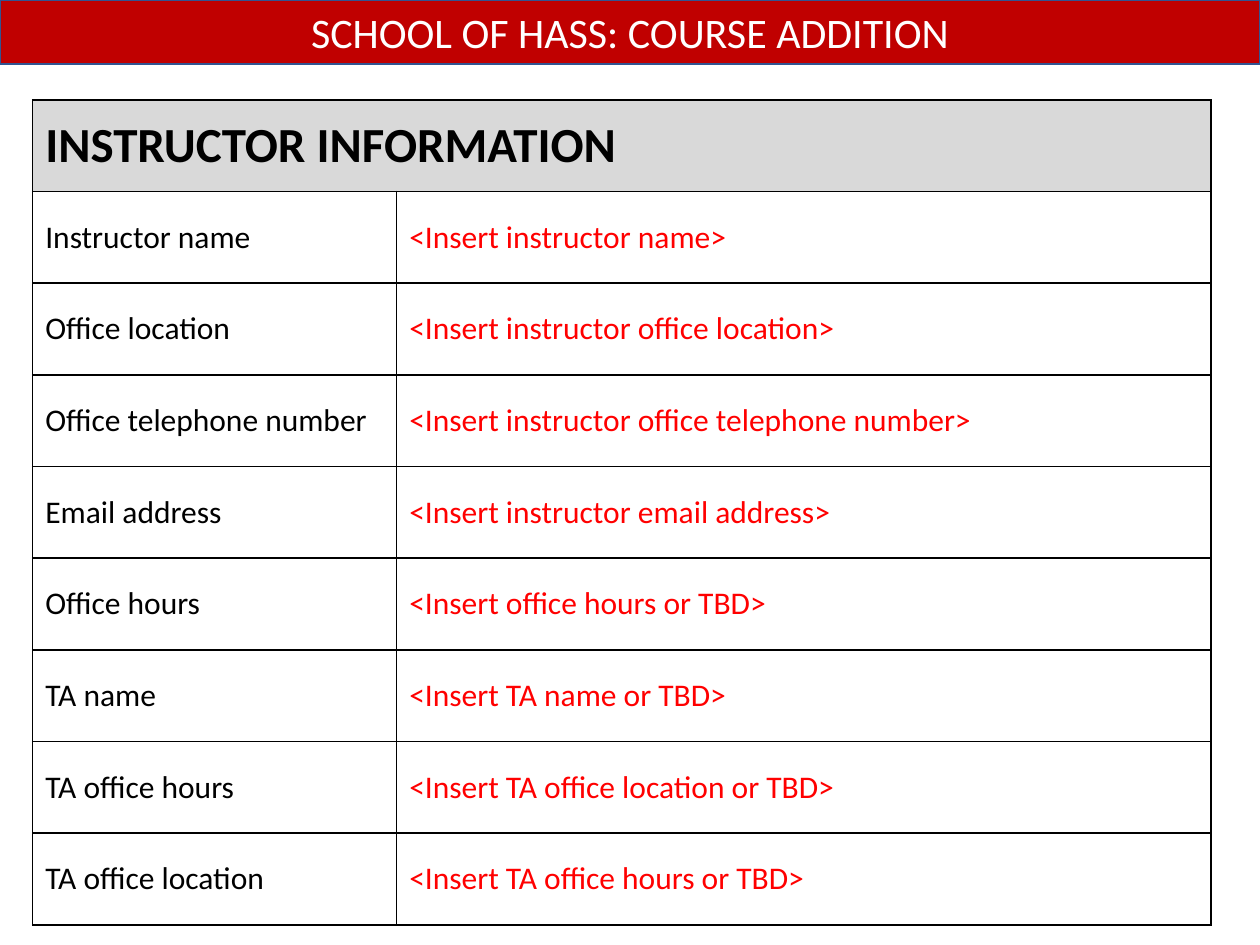
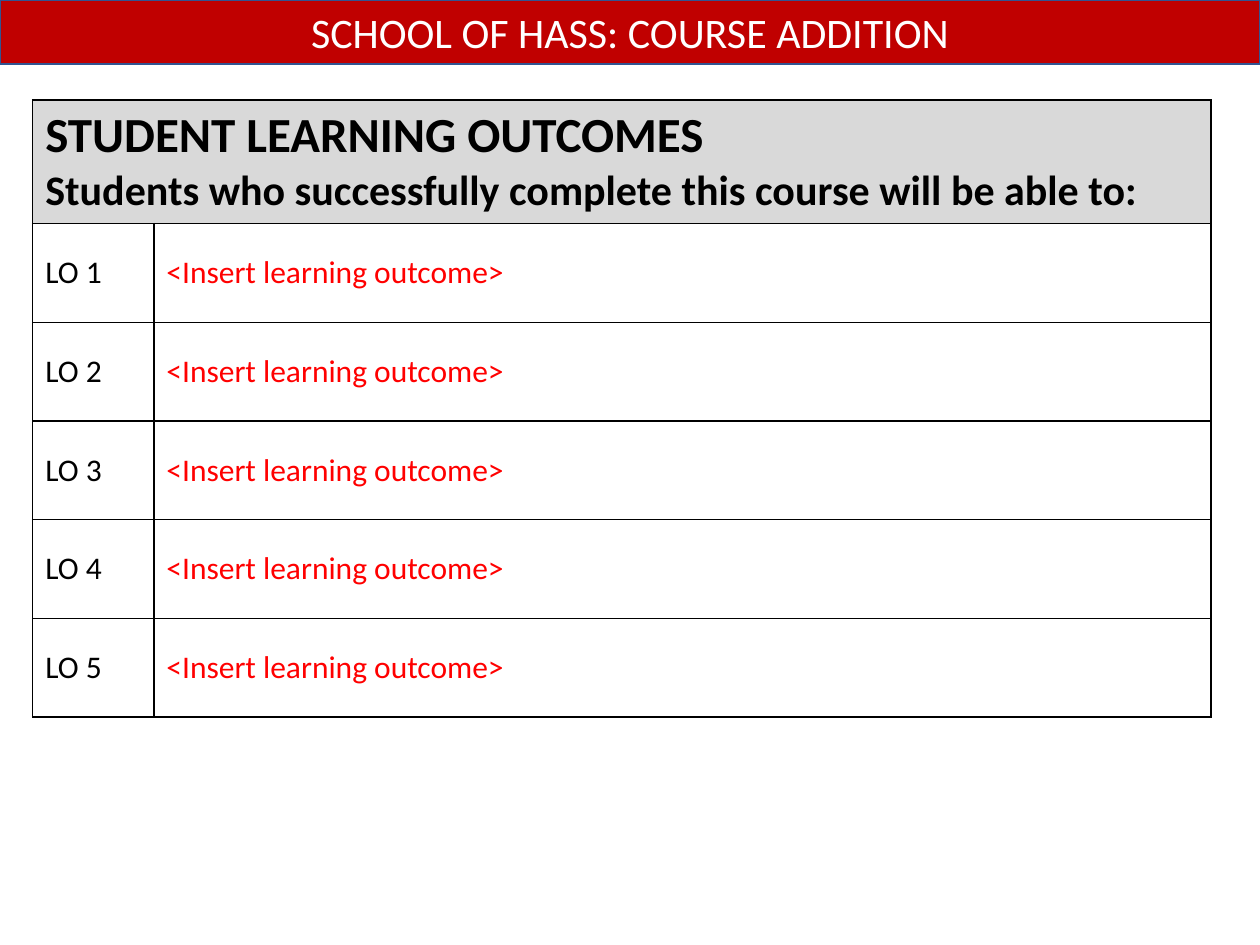
"""Build the instructor and outcome form slides for a course addition."""
from dataclasses import dataclass

import lxml.etree
import pptx
import pptx.dml.color
import pptx.enum.text
import pptx.oxml.ns
import pptx.presentation
import pptx.slide
import pptx.table
import pptx.text.text
import pptx.util

Pt = pptx.util.Pt
COLORS = {
    "band": "C00000",
    "edge": "325491",
    "head": "D9D9D9",
    "text": "000000",
    "hint": "FF0000",
    "white": "FFFFFF",
}
FONT = "Calibri"
BANNER = "SCHOOL OF HASS: COURSE ADDITION"
WIDTH, HEIGHT = 720, 540
LEFT, TOP, SPAN = 18.7, 57, 673.2


@dataclass
class Line:
    text: str
    size: float = 18
    color: str = "text"
    bold: bool = False


@dataclass
class Form:
    head: list[Line]
    rows: list[tuple[str, str]]
    label: float
    first: float
    step: float


FORMS = [
    Form(
        [Line("INSTRUCTOR INFORMATION", 28, bold=True)],
        [
            ("Instructor name", "<Insert instructor name>"),
            ("Office location", "<Insert instructor office location>"),
            ("Office telephone number", "<Insert instructor office telephone number>"),
            ("Email address", "<Insert instructor email address>"),
            ("Office hours", "<Insert office hours or TBD>"),
            ("TA name", "<Insert TA name or TBD>"),
            ("TA office hours", "<Insert TA office location or TBD>"),
            ("TA office location", "<Insert TA office hours or TBD>"),
        ],
        label=208, first=52.4, step=52.4,
    ),
    Form(
        [
            Line("STUDENT LEARNING OUTCOMES", 28, bold=True),
            Line("Students who successfully complete this course will be able to:", 24, bold=True),
        ],
        [(f"LO {n}", "<Insert learning outcome>") for n in range(1, 6)],
        label=69.2, first=70.8, step=56.4,
    ),
]


def paint(name: str) -> pptx.dml.color.RGBColor:
    return pptx.dml.color.RGBColor.from_string(COLORS[name])


def write(frame: pptx.text.text.TextFrame, lines: list[Line]) -> None:
    frame.text = "\n".join(line.text for line in lines)
    for para, line in zip(frame.paragraphs, lines):
        font = para.font
        font.name, font.size, font.bold = FONT, Pt(line.size), line.bold
        font.color.rgb = paint(line.color)


def border(cell: pptx.table._Cell) -> None:
    props = cell._tc.get_or_add_tcPr()
    qn = pptx.oxml.ns.qn
    for side in ("lnL", "lnR", "lnT", "lnB"):
        edge = lxml.etree.SubElement(props, qn(f"a:{side}"), w=str(Pt(1)))
        fill = lxml.etree.SubElement(edge, qn("a:solidFill"))
        lxml.etree.SubElement(fill, qn("a:srgbClr"), val=COLORS["text"])


def banner(slide: pptx.slide.Slide) -> None:
    title = slide.shapes.title
    title.left, title.top, title.width, title.height = Pt(0), Pt(0), Pt(WIDTH), Pt(36.7)
    title.fill.solid()
    title.fill.fore_color.rgb = paint("band")
    title.line.color.rgb = paint("edge")
    title.line.width = Pt(1)
    frame = title.text_frame
    write(frame, [Line(BANNER, 24, "white")])
    frame.auto_size = pptx.enum.text.MSO_AUTO_SIZE.NONE
    frame.vertical_anchor = pptx.enum.text.MSO_ANCHOR.MIDDLE
    frame.paragraphs[0].alignment = pptx.enum.text.PP_ALIGN.CENTER


def grid(slide: pptx.slide.Slide, form: Form) -> None:
    count = len(form.rows)
    tall = form.first + form.step * count
    table = slide.shapes.add_table(
        count + 1, 2, Pt(LEFT), Pt(TOP), Pt(SPAN), Pt(tall)
    ).table
    table.first_row = table.horz_banding = False
    for col, wide in zip(table.columns, (form.label, SPAN - form.label)):
        col.width = Pt(wide)
    for row, high in zip(table.rows, [form.first] + [form.step] * count):
        row.height = Pt(high)
    for cell in table.iter_cells():
        border(cell)
        cell.fill.background()
        cell.vertical_anchor = pptx.enum.text.MSO_ANCHOR.MIDDLE
    head = table.cell(0, 0)
    head.merge(table.cell(0, 1))
    head.fill.solid()
    head.fill.fore_color.rgb = paint("head")
    write(head.text_frame, form.head)
    for num, (label, hint) in enumerate(form.rows, 1):
        write(table.cell(num, 0).text_frame, [Line(label)])
        write(table.cell(num, 1).text_frame, [Line(hint, color="hint")])


def main() -> None:
    deck = pptx.Presentation()
    deck.slide_width, deck.slide_height = Pt(WIDTH), Pt(HEIGHT)
    for form in FORMS:
        slide = deck.slides.add_slide(deck.slide_layouts.get_by_name("Title Only"))
        banner(slide)
        grid(slide, form)
    deck.save("out.pptx")


if __name__ == "__main__":
    main()
